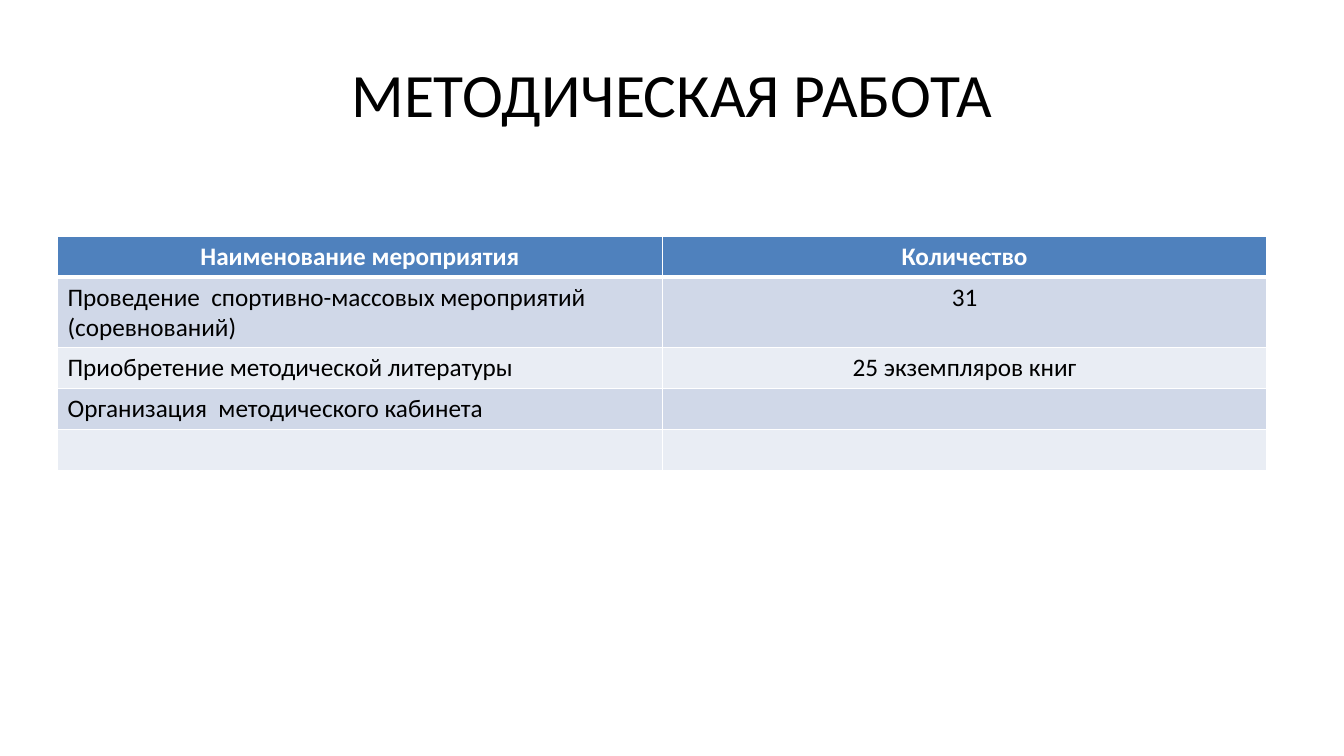
from lxml import etree
from pptx import Presentation
from pptx import util as u
from pptx.dml.color import RGBColor
from pptx.enum import text
from pptx.oxml import ns

COLOURS = {"text": "000000", "white": "FFFFFF", "header": "4F81BD",
           "odd": "D0D8E8", "even": "E9EDF4"}
ROWS = [
    ("Наименование мероприятия", "Количество"),
    ("Проведение  спортивно-массовых мероприятий (соревнований)", "31"),
    ("Приобретение методической литературы", "25 экземпляров книг"),
    ("Организация  методического кабинета", ""),
    ("", ""),
]
ROW_HEIGHT, TALL_ROW_HEIGHT = u.Cm(1.03), u.Cm(1.78)


def write(frame, content, size=18, colour="text", bold=False, align=text.PP_ALIGN.LEFT):
    """Put one formatted paragraph into a text frame."""
    frame.word_wrap = True
    para = frame.paragraphs[0]
    para.alignment = align
    if not content:
        para.font.size = u.Pt(size)
        return
    span = para.add_run()
    span.text = content
    span.font.name = "Calibri"
    span.font.size = u.Pt(size)
    span.font.bold = bold
    span.font.color.rgb = RGBColor.from_string(COLOURS[colour])


def set_borders(cell, **widths):
    """Draw white borders of the given point widths around a cell."""
    properties = cell._tc.get_or_add_tcPr()
    for index, (side, width) in enumerate(widths.items()):
        line = etree.Element(ns.qn(f"a:ln{side}"), w=str(u.Pt(width)))
        fill = etree.SubElement(line, ns.qn("a:solidFill"))
        etree.SubElement(fill, ns.qn("a:srgbClr"), val=COLOURS["white"])
        properties.insert(index, line)


def add_title(page, left, top, width, height):
    """Add the centred slide title."""
    box = page.shapes.add_textbox(left, top, width, height)
    box.text_frame.vertical_anchor = text.MSO_ANCHOR.MIDDLE
    write(box.text_frame, "МЕТОДИЧЕСКАЯ РАБОТА", size=44, align=text.PP_ALIGN.CENTER)


def add_events_table(page, left, top, width):
    """Add the table of events and their quantities."""
    height = TALL_ROW_HEIGHT + ROW_HEIGHT * (len(ROWS) - 1)
    table = page.shapes.add_table(len(ROWS), 2, left, top, width, height).table
    for row, values in enumerate(ROWS):
        table.rows[row].height = TALL_ROW_HEIGHT if row == 1 else ROW_HEIGHT
        header = row == 0
        fill = "header" if header else "odd" if row % 2 else "even"
        for column, value in enumerate(values):
            cell = table.cell(row, column)
            cell.fill.solid()
            cell.fill.fore_color.rgb = RGBColor.from_string(COLOURS[fill])
            set_borders(cell, L=1, R=1, T=3 if row == 1 else 1, B=3 if header else 1)
            centred = header or column == 1
            write(cell.text_frame, value, bold=header,
                  colour="white" if header else "text",
                  align=text.PP_ALIGN.CENTER if centred else text.PP_ALIGN.LEFT)


def main():
    """Build and save the one-slide deck."""
    deck = Presentation()
    deck.slide_width, deck.slide_height = u.Cm(33.87), u.Cm(19.05)
    page = deck.slides.add_slide(deck.slide_layouts[6])
    add_title(page, u.Cm(1.7), u.Cm(0.76), u.Cm(30.48), u.Cm(3.18))
    add_events_table(page, u.Cm(1.45), u.Cm(5.95), u.Cm(30.48))
    deck.save("out.pptx")


if __name__ == "__main__":
    main()
